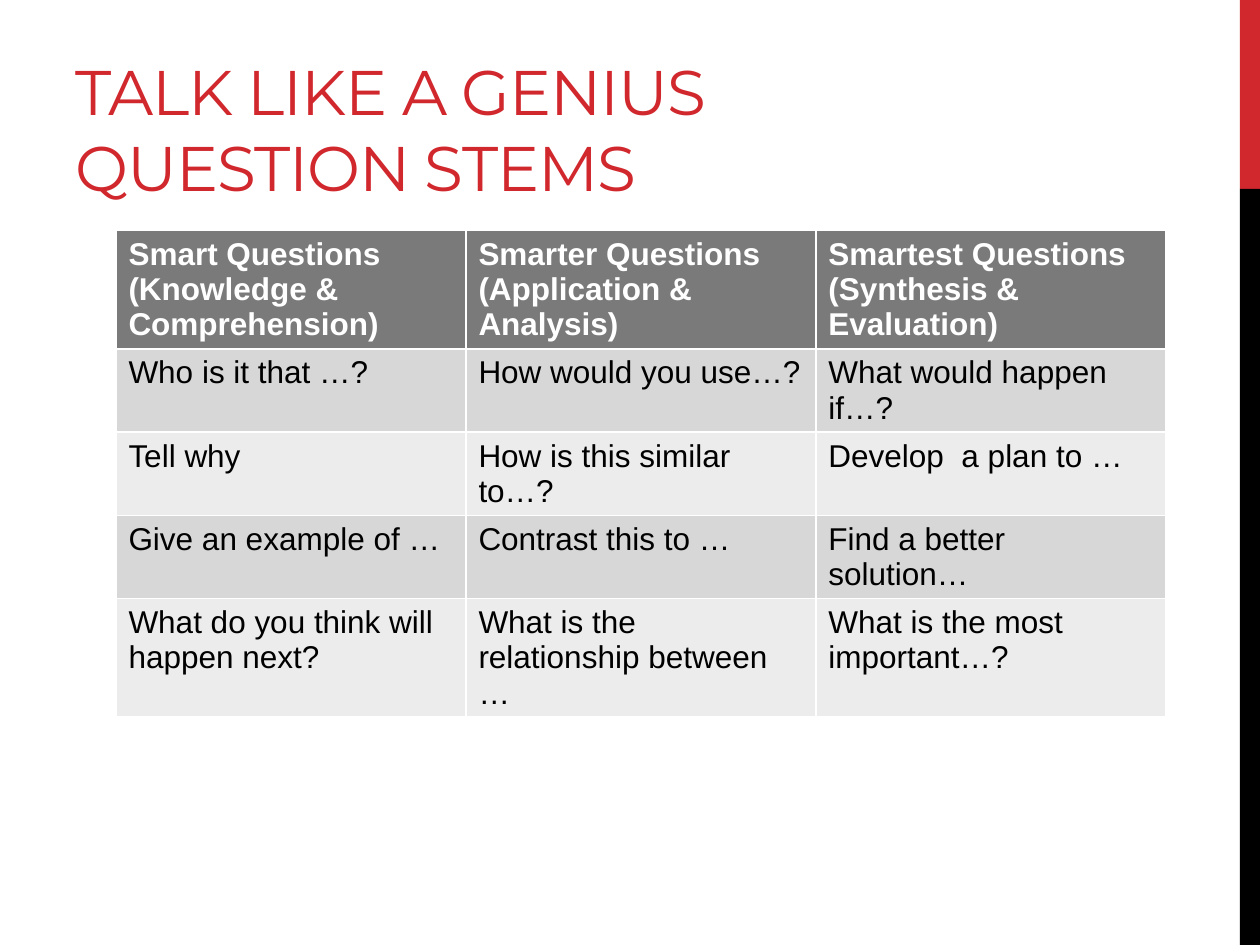
import pptx
import pptx.util
import pptx.dml.color
import pptx.enum.text
import pptx.enum.shapes

Inches = pptx.util.Inches
Color = pptx.dml.color.RGBColor

RED = Color(0xD1, 0x28, 0x2E)
BLACK = Color(0, 0, 0)
WHITE = Color(255, 255, 255)
GRAY = Color(0x7A, 0x7A, 0x7A)
BANDS = [Color(0xEC, 0xEC, 0xEC), Color(0xD7, 0xD7, 0xD7)]

WIDE, HIGH = 10, 7.5
TITLE = "TALK LIKE A GENIUS QUESTION STEMS"
ROWS = [
    ["Smart Questions\n(Knowledge & Comprehension)",
     "Smarter Questions\n(Application & Analysis)",
     "Smartest Questions (Synthesis & Evaluation)"],
    ["Who is it that …?", "How would you use…?", "What would happen if…?"],
    ["Tell why", "How is this similar to…?", "Develop  a plan to …"],
    ["Give an example of …", "Contrast this to …", "Find a better solution…"],
    ["What do you think will happen next?",
     "What is the relationship between …",
     "What is the most important…?"],
]
STRIPS = [(0, 0.2, RED), (0.2, 0.8, BLACK)]
HEAD = {"name": "Arial", "size": pptx.util.Pt(18), "bold": True}
BODY = {**HEAD, "bold": False}
TOP = {"name": "Montserrat", "size": pptx.util.Pt(36)}


def style(font, form, color):
    for key, val in form.items():
        setattr(font, key, val)
    font.color.rgb = color


def place(shape, *box):
    for key, val in zip(("left", "top", "width", "height"), box):
        setattr(shape, key, Inches(val))


def add_strips(slide):
    for top, part, color in STRIPS:
        box = (WIDE * 0.984, HIGH * top, WIDE * 0.016, HIGH * part)
        strip = slide.shapes.add_shape(
            pptx.enum.shapes.MSO_SHAPE.RECTANGLE, *map(Inches, box))
        strip.shadow.inherit = False
        strip.fill.solid()
        strip.fill.fore_color.rgb = color
        strip.line.fill.background()


def add_title(slide):
    title = slide.shapes.title
    place(title, 0.5, 0.17, 6.33, 1.5)
    frame = title.text_frame
    frame.text = TITLE
    frame.auto_size = pptx.enum.text.MSO_AUTO_SIZE.NONE
    frame.vertical_anchor = pptx.enum.text.MSO_ANCHOR.BOTTOM
    para = frame.paragraphs[0]
    para.alignment = pptx.enum.text.PP_ALIGN.LEFT
    run = para.runs[0]
    style(run.font, TOP, RED)
    run.font._element.set("spc", "-60")


def add_stems(slide):
    rows, cols = len(ROWS), len(ROWS[0])
    box = (0.92, 1.83, WIDE / 12 * 10, 0.41 * rows)
    table = slide.shapes.add_table(rows, cols, *map(Inches, box)).table
    for r, row in enumerate(ROWS):
        fill, form, color = (BANDS[r % 2], BODY, BLACK) if r else (GRAY, HEAD, WHITE)
        for c, text in enumerate(row):
            cell = table.cell(r, c)
            cell.text = text
            cell.fill.solid()
            cell.fill.fore_color.rgb = fill
            for para in cell.text_frame.paragraphs:
                style(para.runs[0].font, form, color)


def main():
    deck = pptx.Presentation()
    deck.slide_width, deck.slide_height = Inches(WIDE), Inches(HIGH)
    slide = deck.slides.add_slide(deck.slide_layouts[5])
    add_strips(slide)
    add_title(slide)
    add_stems(slide)
    deck.save("out.pptx")


if __name__ == "__main__":
    main()
